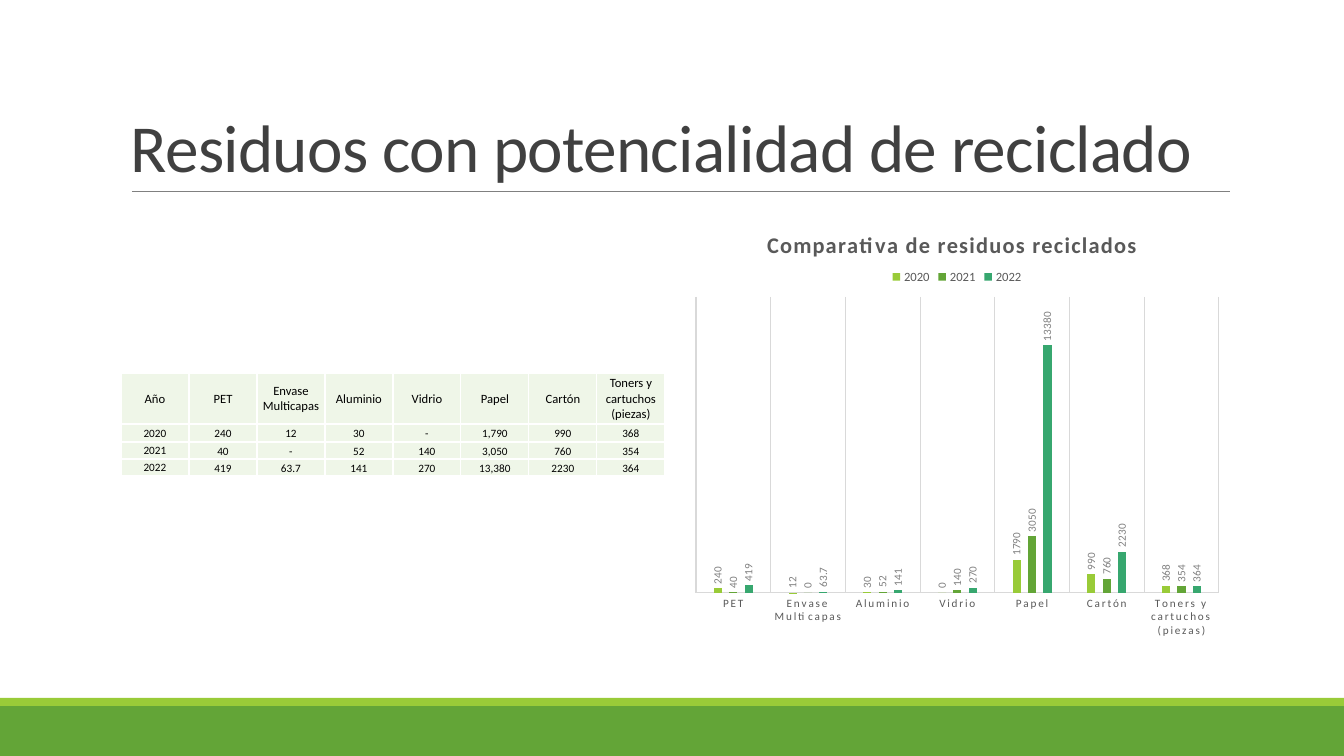
from dataclasses import dataclass

from lxml import etree
from pptx import Presentation
from pptx.chart.data import CategoryChartData
from pptx.dml.color import RGBColor
from pptx.enum.chart import XL_CHART_TYPE, XL_LABEL_POSITION, XL_LEGEND_POSITION, XL_TICK_MARK
from pptx.enum.shapes import MSO_CONNECTOR, MSO_SHAPE
from pptx.enum.text import MSO_ANCHOR, PP_ALIGN
from pptx.oxml import parse_xml
from pptx.oxml.ns import nsdecls, qn
from pptx.util import Pt

CLUSTERED = XL_CHART_TYPE.COLUMN_CLUSTERED
LABEL_OUTSIDE = XL_LABEL_POSITION.OUTSIDE_END
LEGEND_TOP = XL_LEGEND_POSITION.TOP
NO_TICK = XL_TICK_MARK.NONE
STRAIGHT = MSO_CONNECTOR.STRAIGHT
RECTANGLE = MSO_SHAPE.RECTANGLE
MIDDLE, BOTTOM = MSO_ANCHOR.MIDDLE, MSO_ANCHOR.BOTTOM
CENTER = PP_ALIGN.CENTER
EMU_PER_PX = 914400 / 100.8


@dataclass(frozen=True)
class Theme:
    font: str = "Calibri"
    white: str = "FFFFFF"
    black: str = "000000"
    title: str = "404040"
    gray: str = "808080"
    chart_text: str = "595959"
    grid: str = "D9D9D9"
    cell: str = "EFF6E8"
    lime: str = "99CB38"
    green: str = "63A537"
    teal: str = "37A76F"
    title_size: int = 48
    chart_title_size: int = 16
    header_size: int = 9
    small_size: int = 8


@dataclass(frozen=True)
class Box:
    left: int
    top: int
    width: int
    height: int

    def emu(self) -> tuple[int, ...]:
        return tuple(px(n) for n in (self.left, self.top, self.width, self.height))


@dataclass(frozen=True)
class Band:
    box: Box
    color: str


@dataclass(frozen=True)
class Year:
    name: str
    color: str
    cells: tuple[str, ...]
    anchor: MSO_ANCHOR

    def values(self) -> list[float]:
        return [0 if text == "-" else float(text.replace(",", "")) for text in self.cells]


THEME = Theme()
TITLE_BOX = Box(121, 31, 1109, 160)
TABLE_BOX = Box(121, 373, 544, 103)
CHART_BOX = Box(685, 204, 544, 443)
PLOT_BOX = Box(696, 297, 523, 296)
CHART_TITLE_BOX = Box(763, 226, 388, 26)
LEGEND_BOX = Box(888, 268, 138, 18)
ROW_HEIGHTS = (51, 18, 17, 17)
BANDS = (
    Band(Box(0, 706, 1344, 50), THEME.green),
    Band(Box(0, 698, 1344, 8), THEME.lime),
)
MATERIALS = ("PET", "Envase Multicapas", "Aluminio", "Vidrio", "Papel", "Cartón",
             "Toners y cartuchos (piezas)")
YEARS = (
    Year("2020", THEME.lime, ("240", "12", "30", "-", "1,790", "990", "368"), MIDDLE),
    Year("2021", THEME.green, ("40", "-", "52", "140", "3,050", "760", "354"), BOTTOM),
    Year("2022", THEME.teal, ("419", "63.7", "141", "270", "13,380", "2230", "364"), BOTTOM),
)


def px(length: int) -> int:
    return round(length * EMU_PER_PX)


def style_font(font, size: int, color: str, bold: bool = False) -> None:
    font.name, font.size, font.bold = THEME.font, Pt(size), bold
    font.color.rgb = RGBColor.from_string(color)


def draw_band(slide, band: Band) -> None:
    shape = slide.shapes.add_shape(RECTANGLE, *band.box.emu())
    shape.shadow.inherit = False
    shape.fill.solid()
    shape.fill.fore_color.rgb = RGBColor.from_string(band.color)
    shape.line.fill.background()


def draw_title(slide, text: str) -> None:
    frame = slide.shapes.add_textbox(*TITLE_BOX.emu()).text_frame
    frame.word_wrap = True
    frame.vertical_anchor = BOTTOM
    paragraph = frame.paragraphs[0]
    run = paragraph.add_run()
    run.text = text
    paragraph.line_spacing = 0.85
    style_font(paragraph.font, THEME.title_size, THEME.title)
    run.font._element.set("spc", "-50")
    rule = slide.shapes.add_connector(STRAIGHT, px(132), px(191), px(1230), px(191))
    rule.line.width = Pt(0.5)
    rule.line.color.rgb = RGBColor.from_string(THEME.gray)
    etree.SubElement(rule._element.spPr, qn("a:effectLst"))


def fill_cell(cell, text: str, size: int, anchor: MSO_ANCHOR) -> None:
    cell.text = text
    cell.vertical_anchor = anchor
    cell.margin_left = cell.margin_right = cell.margin_top = px(1)
    cell.margin_bottom = 0
    paragraph = cell.text_frame.paragraphs[0]
    paragraph.alignment = CENTER
    style_font(paragraph.font, size, THEME.black)
    properties = cell._tc.get_or_add_tcPr()
    for side in ("lnL", "lnR", "lnT", "lnB"):
        properties.append(parse_xml(
            f'<a:{side} {nsdecls("a")} w="12700"><a:solidFill>'
            f'<a:srgbClr val="{THEME.white}"/></a:solidFill></a:{side}>'))
    cell.fill.solid()
    cell.fill.fore_color.rgb = RGBColor.from_string(THEME.cell)


def draw_table(slide) -> None:
    rows = [("Año", *MATERIALS)] + [(year.name, *year.cells) for year in YEARS]
    anchors = [MIDDLE] + [year.anchor for year in YEARS]
    table = slide.shapes.add_table(len(rows), len(rows[0]), *TABLE_BOX.emu()).table
    table.first_row = table.horz_banding = False
    for column in table.columns:
        column.width = px(TABLE_BOX.width // len(rows[0]))
    for i, texts in enumerate(rows):
        table.rows[i].height = px(ROW_HEIGHTS[i])
        size = THEME.small_size if i else THEME.header_size
        for j, text in enumerate(texts):
            fill_cell(table.cell(i, j), text, size, anchors[i] if j else MIDDLE)


def layout_xml(box: Box, inner: bool = False):
    target = '<c:layoutTarget val="inner"/>' if inner else ""
    parts = {
        "x": (box.left - CHART_BOX.left) / CHART_BOX.width,
        "y": (box.top - CHART_BOX.top) / CHART_BOX.height,
        "w": box.width / CHART_BOX.width,
        "h": box.height / CHART_BOX.height,
    }
    modes = '<c:xMode val="edge"/><c:yMode val="edge"/>'
    sizes = "".join(f'<c:{name} val="{part:.4f}"/>' for name, part in parts.items())
    return parse_xml(f'<c:layout {nsdecls("c")}><c:manualLayout>{target}{modes}{sizes}'
                     '</c:manualLayout></c:layout>')


def place(element, layout, before: str) -> None:
    for existing in element.findall(qn("c:layout")):
        element.remove(existing)
    element.find(qn(before)).addprevious(layout)


def draw_chart(slide) -> None:
    data = CategoryChartData()
    data.categories = MATERIALS
    for year in YEARS:
        data.add_series(year.name, year.values())
    chart = slide.shapes.add_chart(CLUSTERED, *CHART_BOX.emu(), data).chart
    style_font(chart.font, 10, THEME.black)

    # Title and legend
    chart.has_title = True
    chart.chart_title.text_frame.text = "Comparativa de residuos reciclados"
    run = chart.chart_title.text_frame.paragraphs[0].runs[0]
    style_font(run.font, THEME.chart_title_size, THEME.chart_text, bold=True)
    run.font._element.set("spc", "100")
    place(chart.chart_title._element, layout_xml(CHART_TITLE_BOX), "c:overlay")
    chart.has_legend = True
    chart.legend.position = LEGEND_TOP
    chart.legend.include_in_layout = False
    style_font(chart.legend.font, THEME.header_size, THEME.chart_text)
    place(chart.legend._element, layout_xml(LEGEND_BOX), "c:overlay")

    # Axes
    axis = chart.category_axis
    axis.major_tick_mark = axis.minor_tick_mark = NO_TICK
    axis.has_major_gridlines = True
    for line in (axis.format.line, axis.major_gridlines.format.line):
        line.width = Pt(0.75)
        line.color.rgb = RGBColor.from_string(THEME.grid)
    style_font(axis.tick_labels.font, THEME.small_size, THEME.chart_text)
    axis.tick_labels.font._element.set("spc", "120")
    chart.value_axis.has_major_gridlines = False
    chart.value_axis.minimum_scale, chart.value_axis.maximum_scale = 0, 16000
    chart.value_axis.visible = False

    # Columns with upright value labels
    plot = chart.plots[0]
    plot.gap_width, plot.overlap, plot.vary_by_categories = 444, -90, False
    place(chart._chartSpace.chart.plotArea, layout_xml(PLOT_BOX, inner=True), "c:barChart")
    for series, year in zip(plot.series, YEARS):
        series.format.fill.solid()
        series.format.fill.fore_color.rgb = RGBColor.from_string(year.color)
        labels = series.data_labels
        labels.show_value = True
        labels.position = LABEL_OUTSIDE
        style_font(labels.font, THEME.small_size, THEME.gray)
        body = labels._element.find(f'{qn("c:txPr")}/{qn("a:bodyPr")}')
        body.set("rot", "-5400000")
        body.set("vert", "horz")


def main() -> None:
    presentation = Presentation()
    presentation.slide_width, presentation.slide_height = px(1344), px(756)
    slide = presentation.slides.add_slide(presentation.slide_layouts[6])
    for band in BANDS:
        draw_band(slide, band)
    draw_title(slide, "Residuos con potencialidad de reciclado")
    draw_table(slide)
    draw_chart(slide)
    presentation.save("out.pptx")


if __name__ == "__main__":
    main()
